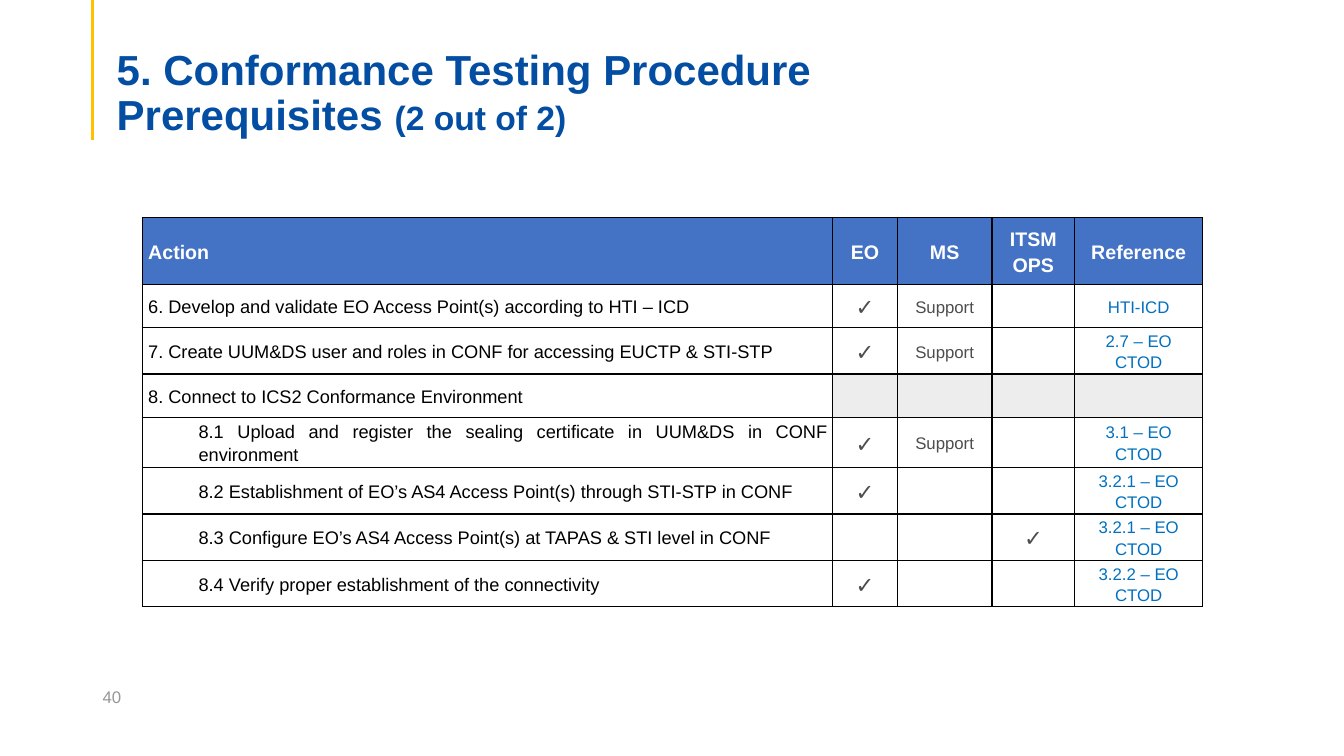
from lxml import etree
from pptx import Presentation
from pptx.dml.color import RGBColor
from pptx.enum.text import MSO_ANCHOR, PP_ALIGN
from pptx.oxml.ns import qn
from pptx.util import Inches, Pt

HEADER = ["Action", "EO", "MS", "ITSM OPS", "Reference"]
ACTIONS = [
    ["6. Develop and validate EO Access Point(s) according to HTI – ICD", "✓", "Support", "", "HTI-ICD"],
    ["7. Create UUM&DS user and roles in CONF for accessing EUCTP & STI-STP", "✓", "Support", "", "2.7 – EO CTOD"],
    ["8. Connect to ICS2 Conformance Environment", "", "", "", ""],
    ["8.1 Upload and register the sealing certificate in UUM&DS in CONF environment", "✓", "Support", "",
     "3.1 – EO CTOD"],
    ["8.2 Establishment of EO’s AS4 Access Point(s) through STI-STP in CONF", "✓", "", "", "3.2.1 – EO CTOD"],
    ["8.3 Configure EO’s AS4 Access Point(s) at TAPAS & STI level in CONF", "", "", "✓", "3.2.1 – EO CTOD"],
    ["8.4 Verify proper establishment of the connectivity", "✓", "", "", "3.2.2 – EO CTOD"],
]
COLUMN_WIDTHS = [6.85, 0.64, 0.94, 0.82, 1.27]
HEADER_HEIGHT, ROW_HEIGHT = 0.66, 0.43

# Text formats
TITLE = {"size": Pt(30), "bold": True, "color": "034EA2"}
TITLE_NOTE = {**TITLE, "size": Pt(24)}
PAGE_NUMBER = {"size": Pt(12), "bold": False, "color": "979797"}
HEAD = {"size": Pt(14), "bold": True, "color": "FFFFFF"}
ACTION = {"size": Pt(13), "bold": False, "color": "000000"}
CHECK = {"size": Pt(16), "bold": True, "color": "4D4D4D"}
SUPPORT = {"size": Pt(12), "bold": False, "color": "4D4D4D"}
REFERENCE = {**SUPPORT, "color": "0070C0"}


def rgb(value):
    return RGBColor.from_string(value)


def set_attributes(target, values):
    for name, value in values.items():
        setattr(target, name, value)


def add_span(para, text, style):
    span = para.add_run()
    span.text = text
    for name, value in {"name": "Arial", **style}.items():
        if name == "color":
            span.font.color.rgb = rgb(value)
        else:
            setattr(span.font, name, value)


def add_text_box(page, left, top, width, height, anchor, bottom):
    frame = page.shapes.add_textbox(Inches(left), Inches(top), Inches(width), Inches(height)).text_frame
    set_attributes(frame, {"word_wrap": True, "vertical_anchor": anchor, "margin_bottom": Inches(bottom)})
    return frame


def add_title(page, left, top, width, height):
    # Accent line from the top edge of the page
    accent = page.shapes.add_connector(1, Inches(left), 0, Inches(left), Inches(top + height))
    accent.line.color.rgb = rgb("FFC000")
    accent.line.width = Pt(2.25)
    etree.SubElement(accent._element.spPr, qn("a:effectLst"))

    # Two title lines
    frame = add_text_box(page, left + 0.14, top, width, height, MSO_ANCHOR.BOTTOM, 0)
    lines = [
        [("5. Conformance Testing Procedure", TITLE)],
        [("Prerequisites ", TITLE), ("(2 out of 2)", TITLE_NOTE)],
    ]
    for index, spans in enumerate(lines):
        para = frame.add_paragraph() if index else frame.paragraphs[0]
        para.line_spacing = 0.9
        for text, style in spans:
            add_span(para, text, style)


def add_page_number(page, left, top, width, height):
    frame = add_text_box(page, left, top, width, height, MSO_ANCHOR.MIDDLE, 0.05)
    add_span(frame.paragraphs[0], "40", PAGE_NUMBER)


def add_borders(cell):
    properties = cell._tc.get_or_add_tcPr()
    for index, side in enumerate(("lnL", "lnR", "lnT", "lnB")):
        border = etree.Element(qn(f"a:{side}"), w=str(Pt(1)))
        fill = etree.SubElement(border, qn("a:solidFill"))
        etree.SubElement(fill, qn("a:srgbClr"), val="000000")
        properties.insert(index, border)


def body_style(text, column):
    if column == 0:
        return ACTION
    if text == "✓":
        return CHECK
    return REFERENCE if column == len(HEADER) - 1 else SUPPORT


def fill_cell(cell, text, style, align, fill):
    set_attributes(cell, {
        "vertical_anchor": MSO_ANCHOR.MIDDLE,
        "margin_left": Inches(0.06), "margin_right": Inches(0.06),
        "margin_top": 0, "margin_bottom": 0,
    })
    cell.fill.solid()
    cell.fill.fore_color.rgb = rgb(fill)
    add_borders(cell)
    para = cell.text_frame.paragraphs[0]
    set_attributes(para, {"alignment": align, "line_spacing": 1.15})
    if text:
        add_span(para, text, style)
    else:
        para.font.size = Pt(12)
    # Sub-steps are indented
    if text.startswith("8.") and text[2].isdigit():
        para.level = 1
        para._p.get_or_add_pPr().set("marL", str(Inches(0.5)))


def add_action_table(page, left, top):
    rows = [HEADER] + ACTIONS
    height = HEADER_HEIGHT + ROW_HEIGHT * len(ACTIONS)
    table = page.shapes.add_table(len(rows), len(HEADER), Inches(left), Inches(top),
                                  Inches(sum(COLUMN_WIDTHS)), Inches(height)).table
    for column, width in zip(table.columns, COLUMN_WIDTHS):
        column.width = Inches(width)
    for row, texts in enumerate(rows):
        table.rows[row].height = Inches(ROW_HEIGHT if row else HEADER_HEIGHT)
        is_group = not any(texts[1:])
        for column, text in enumerate(texts):
            align, fill = PP_ALIGN.CENTER, "FFFFFF"
            if column == 0:
                align = PP_ALIGN.JUSTIFY if row else PP_ALIGN.LEFT
            elif is_group:
                fill = "EDEDED"
            if row == 0:
                fill = "4472C4"
            style = body_style(text, column) if row else HEAD
            fill_cell(table.cell(row, column), text, style, align, fill)


def main():
    deck = Presentation()
    deck.slide_width, deck.slide_height = Inches(13.33), Inches(7.5)
    page = deck.slides.add_slide(deck.slide_layouts[6])
    add_title(page, 0.92, 0.53, 11.5, 0.86)
    add_action_table(page, 1.41, 2.16)
    add_page_number(page, 0.92, 6.71, 3, 0.4)
    deck.save("out.pptx")


if __name__ == "__main__":
    main()
